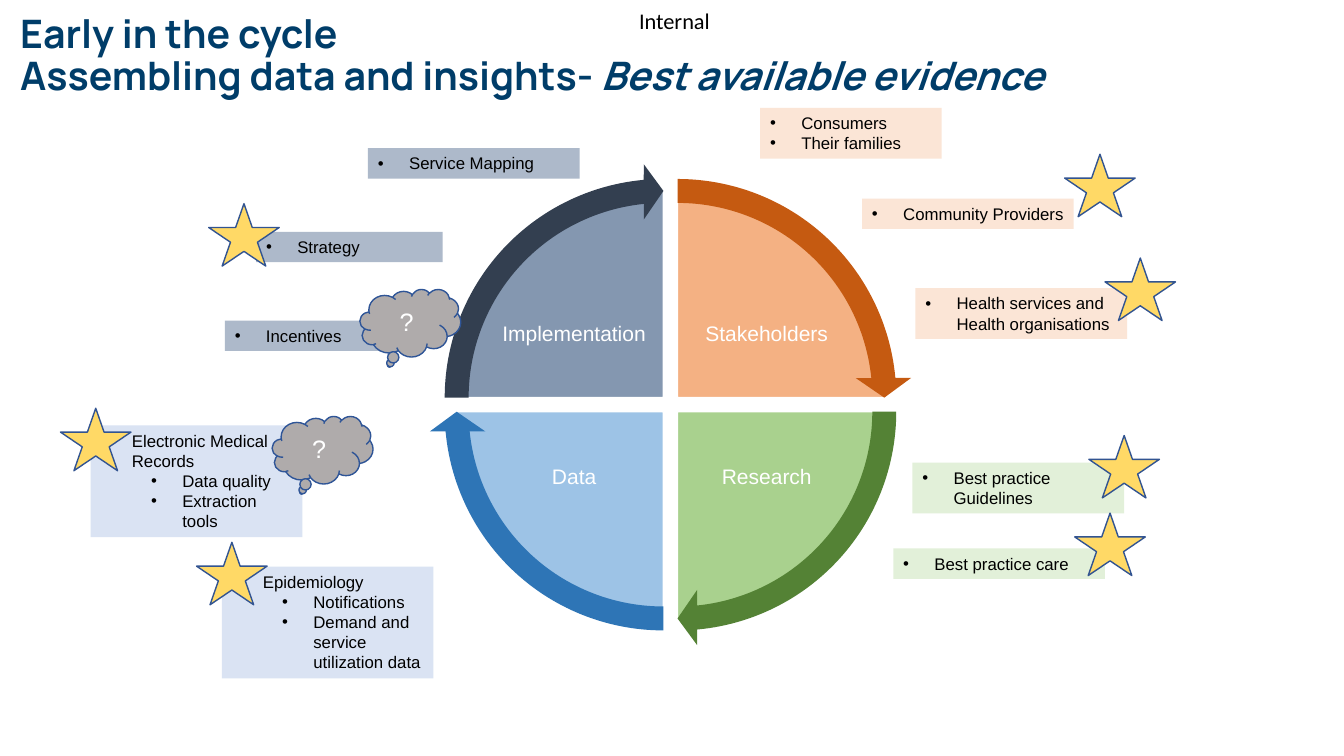
from dataclasses import dataclass

from lxml.etree import SubElement
from pptx import Presentation
from pptx.dml.color import RGBColor
from pptx.enum.shapes import MSO_SHAPE as Shape
from pptx.enum.text import MSO_ANCHOR as Anchor, MSO_AUTO_SIZE as AutoSize, PP_ALIGN as Align
from pptx.oxml.ns import qn
from pptx.util import Inches, Pt

COLORS = {
    "title": "003D69", "black": "000000", "white": "FFFFFF",
    "star": "FFD966", "star_line": "325491",
    "cloud": "AFABAB", "cloud_line": "2F5597",
    "stakeholders": "F4B183", "stakeholders_arrow": "C55A11", "stakeholders_note": "FBE5D6",
    "research": "A9D18E", "research_arrow": "548235", "research_note": "E2F0D9",
    "data": "9DC3E6", "data_arrow": "2E75B6", "data_note": "DAE3F3",
    "implementation": "8497B0", "implementation_arrow": "333F50", "implementation_note": "ADB9CA",
}
QUARTER_TURN = 54
QUADRANTS = [("Stakeholders", 1, -1), ("Research", 1, 1), ("Data", -1, 1), ("Implementation", -1, -1)]


@dataclass
class Note:
    """A bulleted note, placed in its region, with optional marker offsets."""
    left: float
    top: float
    rows: int
    items: tuple
    details: tuple = ()
    width: float = 2.1
    star: tuple = None
    cloud: tuple = None


RIGHT_NOTES = {
    "stakeholders": [
        Note(0.04, 0.07, 2, ("Consumers", "Their families"), width=1.8),
        Note(1.05, 0.97, 1, ("Community Providers",), star=(2.01, -0.44)),
        Note(1.58, 1.86, 2, ("Health services and Health organisations",), star=(1.88, -0.3)),
    ],
    "research": [
        Note(1.55, 3.59, 2, ("Best practice Guidelines",), star=(1.75, -0.27)),
        Note(1.36, 4.44, 1, ("Best practice care",), star=(1.8, -0.35)),
    ],
}
LEFT_NOTES = {
    "data": [
        Note(1.7, 4.62, 5, ("Epidemiology",), ("Notifications", "Demand and service utilization data"),
             star=(-0.25, -0.24)),
        Note(0.4, 3.22, 5, ("Electronic Medical Records",), ("Data quality", "Extraction tools"),
             star=(-0.3, -0.17), cloud=(1.8, -0.09)),
    ],
    "implementation": [
        Note(3.15, 0.47, 1, ("Service Mapping",)),
        Note(2.04, 1.3, 1, ("Strategy",), width=1.85, star=(-0.47, -0.28)),
        Note(1.73, 2.18, 1, ("Incentives",), width=1.85, cloud=(1.34, -0.31)),
    ],
}


def write_run(paragraph, text, size=12, font="Arial", color="black", bold=None, italic=None):
    """Add one formatted run to a paragraph."""
    run = paragraph.add_run()
    run.text = text
    run.font.name, run.font.size = font, Pt(size)
    run.font.bold, run.font.italic = bold, italic
    run.font.color.rgb = RGBColor.from_string(COLORS[color])


def set_frame(frame, margins=(0.1, 0.05), anchor=Anchor.TOP, grow=False):
    """Set the wrapping, insets and anchor of a text frame."""
    frame.word_wrap = True
    frame.margin_left = frame.margin_right = Inches(margins[0])
    frame.margin_top = frame.margin_bottom = Inches(margins[1])
    frame.vertical_anchor = anchor
    frame.auto_size = AutoSize.SHAPE_TO_FIT_TEXT if grow else AutoSize.NONE


def add_figure(slide, kind, box, fill, line=None, adjustments=()):
    """Add a flat preset shape in a box given in inches."""
    shape = slide.shapes.add_shape(kind, *map(Inches, box))
    shape.shadow.inherit = False
    shape.fill.solid()
    shape.fill.fore_color.rgb = RGBColor.from_string(COLORS[fill])
    if line:
        shape.line.color.rgb = RGBColor.from_string(COLORS[line])
        shape.line.width = Pt(1)
    else:
        shape.line.fill.background()
    for index, value in enumerate(adjustments):
        shape.adjustments[index] = value
    return shape


def add_label(slide, text, box, **style):
    """Add a centred text box with one line."""
    frame = slide.shapes.add_textbox(*map(Inches, box)).text_frame
    set_frame(frame, margins=(0, 0), anchor=Anchor.MIDDLE)
    paragraph = frame.paragraphs[0]
    paragraph.alignment = Align.CENTER
    write_run(paragraph, text, **style)


def add_bullet(paragraph, text, level=0):
    """Write a bulleted line at an indent level."""
    paragraph.alignment, paragraph.level = Align.LEFT, level
    properties = paragraph._p.get_or_add_pPr()
    properties.set("marL", str(Inches(0.31 + 0.5 * level)))
    properties.set("indent", str(Inches(-0.31)))
    SubElement(properties, qn("a:buFont")).set("typeface", "Arial")
    SubElement(properties, qn("a:buChar")).set("char", "•")
    write_run(paragraph, text)


def add_heading(slide, left, top, width, height):
    """Place the two-line slide title."""
    title = slide.shapes.title
    title.left, title.top, title.width, title.height = map(Inches, (left, top, width, height))
    frame = title.text_frame
    set_frame(frame, margins=(0, 0.04), grow=True)
    paragraph = frame.paragraphs[0]
    paragraph.alignment, paragraph.line_spacing = Align.LEFT, 0.9
    style = dict(size=28, font="Manrope", color="title", bold=True)
    write_run(paragraph, "Early in the cycle", **style)
    paragraph.add_line_break()
    write_run(paragraph, "Assembling data and insights- ", **style)
    write_run(paragraph, "Best available evidence", italic=True, **style)


def add_wheel(slide, center_x, center_y, diameter=4.13, gap=0.07):
    """Draw the four labelled quadrants, then the arrows around them."""
    def square(across, down, side):
        return (center_x + across * gap - side / 2, center_y + down * gap - side / 2, side, side)

    starts = [(3 + turn) % 4 * QUARTER_TURN for turn in range(4)]
    for (name, across, down), start in zip(QUADRANTS, starts):
        end = (start + QUARTER_TURN) % (4 * QUARTER_TURN)
        add_figure(slide, Shape.PIE, square(across, down, diameter), name.lower(), "white", (start, end))
        label_box = (center_x + across * 0.955 - 0.765, center_y + down * 0.71 - 0.565, 1.53, 1.13)
        add_label(slide, name, label_box, size=15, color="white")
    for (name, across, down), start in zip(QUADRANTS, starts):
        add_figure(slide, Shape.CIRCULAR_ARROW, square(across, down, diameter + 0.52),
                   f"{name.lower()}_arrow", adjustments=(0.051, 3.275, start + 50.725, start, 0.059))


def add_note(slide, note, left, top, fill):
    """Draw one note with its star and cloud."""
    box = (left, top, note.width, 0.1 + 0.202 * note.rows)
    frame = add_figure(slide, Shape.RECTANGLE, box, fill).text_frame
    set_frame(frame, grow=True)
    lines = [(text, 0) for text in note.items] + [(text, 1) for text in note.details]
    for index, (text, level) in enumerate(lines):
        add_bullet(frame.add_paragraph() if index else frame.paragraphs[0], text, level)
    if note.star:
        star_box = (left + note.star[0], top + note.star[1], 0.7, 0.62)
        add_figure(slide, Shape.STAR_5_POINT, star_box, "star", "star_line")
    if note.cloud:
        cloud_box = (left + note.cloud[0], top + note.cloud[1], 1, 0.67)
        cloud = add_figure(slide, Shape.CLOUD_CALLOUT, cloud_box, "cloud", "cloud_line")
        set_frame(cloud.text_frame, anchor=Anchor.MIDDLE)
        paragraph = cloud.text_frame.paragraphs[0]
        paragraph.alignment = Align.CENTER
        write_run(paragraph, "?", size=18, color="white")


def add_notes(slide, left, top, themes):
    """Draw the notes on one side of the wheel."""
    for theme, notes in themes.items():
        for note in notes:
            add_note(slide, note, left + note.left, top + note.top, f"{theme}_note")


def main():
    """Build and save the slide."""
    presentation = Presentation()
    presentation.slide_width, presentation.slide_height = Inches(13.33), Inches(7.5)
    slide = presentation.slides.add_slide(presentation.slide_layouts[5])
    add_label(slide, "Internal", (6.31, 0.07, 0.76, 0.27), size=16, font="Calibri")
    add_heading(slide, 0.2, 0.1, 11.76, 0.93)
    add_wheel(slide, 6.65, 4.015)
    add_notes(slide, 7.5, 1, RIGHT_NOTES)
    add_notes(slide, 0.5, 1, LEFT_NOTES)
    presentation.save("out.pptx")


if __name__ == "__main__":
    main()
